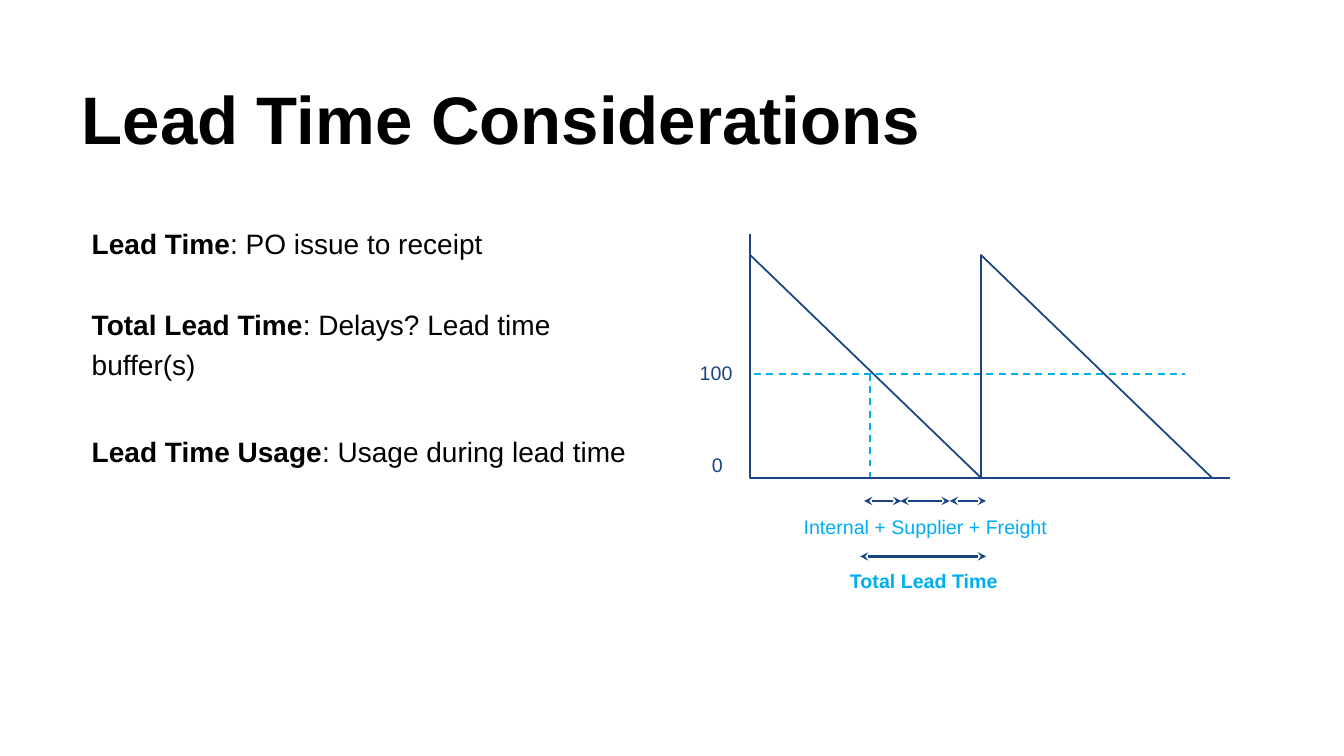
from dataclasses import dataclass

from lxml.etree import SubElement
from pptx import Presentation
from pptx.dml.color import RGBColor
from pptx.enum.dml import MSO_LINE
from pptx.enum.shapes import MSO_CONNECTOR
from pptx.enum.text import MSO_ANCHOR
from pptx.oxml.ns import qn
from pptx.slide import Slide
from pptx.util import Inches, Pt

BLACK = RGBColor(0x00, 0x00, 0x00)
NAVY = RGBColor(0x19, 0x45, 0x82)
CYAN = RGBColor(0x00, 0xAE, 0xEF)
FONT = "Arial"

# Key positions of the stock diagram, in inches
AXIS_X, BASE_Y = 7.44, 4.74
PEAK_Y, REORDER_Y = 2.53, 3.71
CYCLE = 2.29
STAGES_Y, TOTAL_Y = 4.97, 5.52


@dataclass
class Line:
    start: tuple[float, float]
    end: tuple[float, float]
    color: RGBColor = NAVY
    width: float = 2
    dashed: bool = False


@dataclass
class Label:
    text: str
    box: tuple[float, float, float, float]
    color: RGBColor = NAVY
    bold: bool = False


@dataclass
class Term:
    name: str
    meaning: str
    space_before: float = 0


DASHED_LINES = [
    Line((7.48, REORDER_Y), (11.75, REORDER_Y), CYAN, 1.25, True),
    Line((8.63, REORDER_Y), (8.63, 4.73), CYAN, 1.25, True),
]
ARROWS = [
    Line((8.57, STAGES_Y), (8.94, STAGES_Y)),
    Line((8.93, STAGES_Y), (9.42, STAGES_Y)),
    Line((9.42, STAGES_Y), (9.78, STAGES_Y)),
    Line((8.53, TOTAL_Y), (9.78, TOTAL_Y)),
]
OUTLINES = [
    # Axes
    [(AXIS_X, 2.32), (AXIS_X, BASE_Y), (12.2, BASE_Y)],
    # Stock level over two cycles
    [(AXIS_X, PEAK_Y), (AXIS_X + CYCLE, BASE_Y),
     (AXIS_X + CYCLE, PEAK_Y), (AXIS_X + 2 * CYCLE, BASE_Y)],
]
LABELS = [
    Label("100", (6.94, 3.58, 0.35, 0.25)),
    Label("0", (7.06, 4.49, 0.14, 0.25)),
    Label("Internal + Supplier + Freight", (7.97, 5.11, 2.52, 0.22), CYAN),
    Label("Total Lead Time", (8.43, 5.64, 1.59, 0.24), CYAN, True),
]
TERMS = [
    Term("Lead Time", ": PO issue to receipt"),
    Term("Total Lead Time", ": Delays? Lead time buffer(s)", 29),
    Term("Lead Time Usage", ": Usage during lead time", 33),
]


def add_text_frame(slide: Slide, box: tuple[float, float, float, float],
                   wrap: bool = True):
    frame = slide.shapes.add_textbox(*map(Inches, box)).text_frame
    frame.word_wrap = wrap
    frame.margin_left = frame.margin_right = 0
    frame.margin_top = frame.margin_bottom = 0
    return frame


def add_run(paragraph, text: str, *, size: float, color: RGBColor = BLACK,
            bold: bool = False) -> None:
    run = paragraph.add_run()
    run.text = text
    run.font.name = FONT
    run.font.size = Pt(size)
    run.font.bold = bold
    run.font.color.rgb = color


def add_line(slide: Slide, line: Line, arrows: bool = False) -> None:
    connector = slide.shapes.add_connector(
        MSO_CONNECTOR.STRAIGHT, *map(Inches, line.start + line.end))
    connector.line.color.rgb = line.color
    connector.line.width = Pt(line.width)
    if line.dashed:
        connector.line.dash_style = MSO_LINE.DASH
    if arrows:
        outline = connector.line._get_or_add_ln()
        for end in ("a:headEnd", "a:tailEnd"):
            SubElement(outline, qn(end), type="stealth")
    SubElement(connector._element.spPr, qn("a:effectLst"))


def add_outline(slide: Slide, points: list[tuple[float, float]]) -> None:
    corners = [(Inches(x), Inches(y)) for x, y in points]
    builder = slide.shapes.build_freeform(*corners[0])
    builder.add_line_segments(corners[1:], close=False)
    shape = builder.convert_to_shape()
    shape.shadow.inherit = False
    shape.fill.background()
    shape.line.color.rgb = NAVY
    shape.line.width = Pt(1.25)


def main() -> None:
    presentation = Presentation()
    presentation.slide_width = Inches(13.33)
    presentation.slide_height = Inches(7.5)
    slide = presentation.slides.add_slide(presentation.slide_layouts[6])

    # Title
    title = add_text_frame(slide, (0.81, 0.23, 11.71, 1.35))
    title.vertical_anchor = MSO_ANCHOR.BOTTOM
    title.paragraphs[0].line_spacing = 0.9
    add_run(title.paragraphs[0], "Lead Time Considerations", size=48, bold=True)

    # Definitions
    body = add_text_frame(slide, (0.91, 2.18, 5.61, 2.91))
    for index, term in enumerate(TERMS):
        paragraph = body.add_paragraph() if index else body.paragraphs[0]
        paragraph.line_spacing = 1.2
        if term.space_before:
            paragraph.space_before = Pt(term.space_before)
        add_run(paragraph, term.name, size=20, bold=True)
        add_run(paragraph, term.meaning, size=20)

    # Stock diagram
    for line in DASHED_LINES:
        add_line(slide, line)
    for points in OUTLINES:
        add_outline(slide, points)
    for arrow in ARROWS:
        add_line(slide, arrow, arrows=True)
    for label in LABELS:
        frame = add_text_frame(slide, label.box, wrap=False)
        add_run(frame.paragraphs[0], label.text, size=14,
                color=label.color, bold=label.bold)

    presentation.save("out.pptx")


if __name__ == "__main__":
    main()
